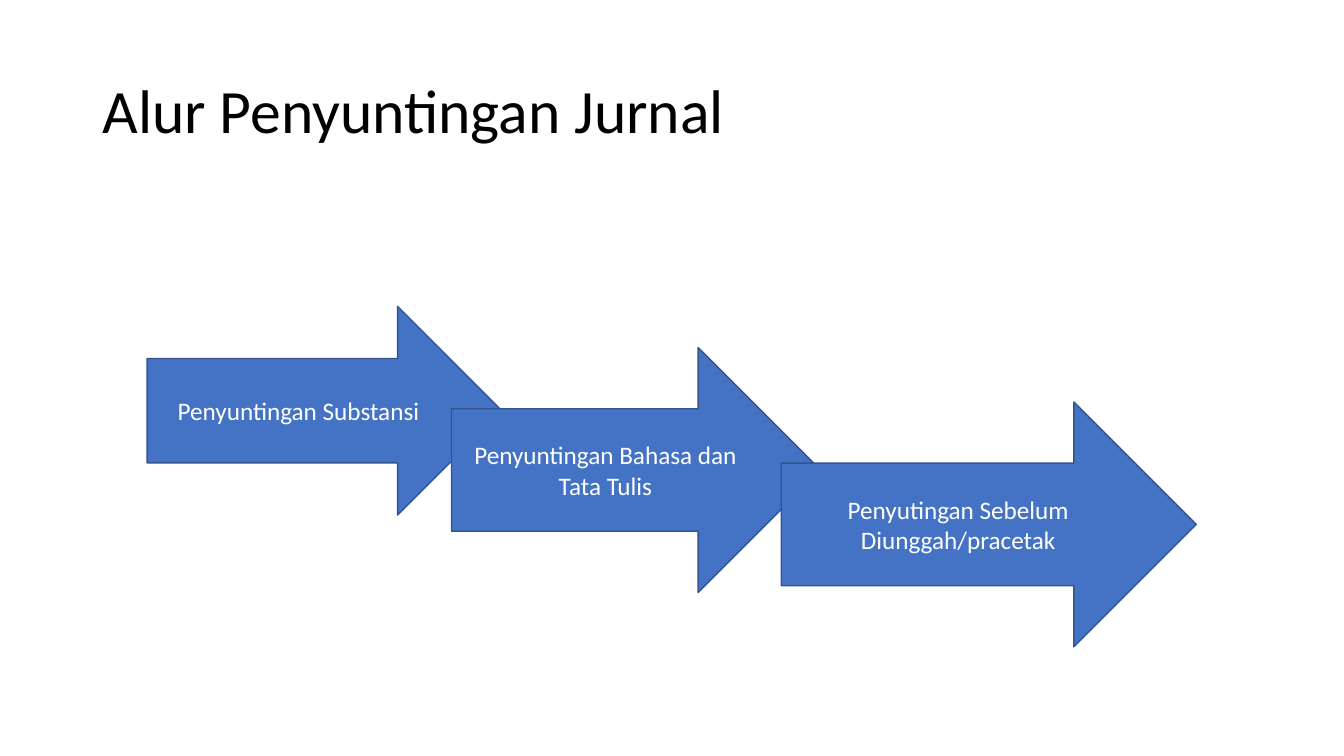
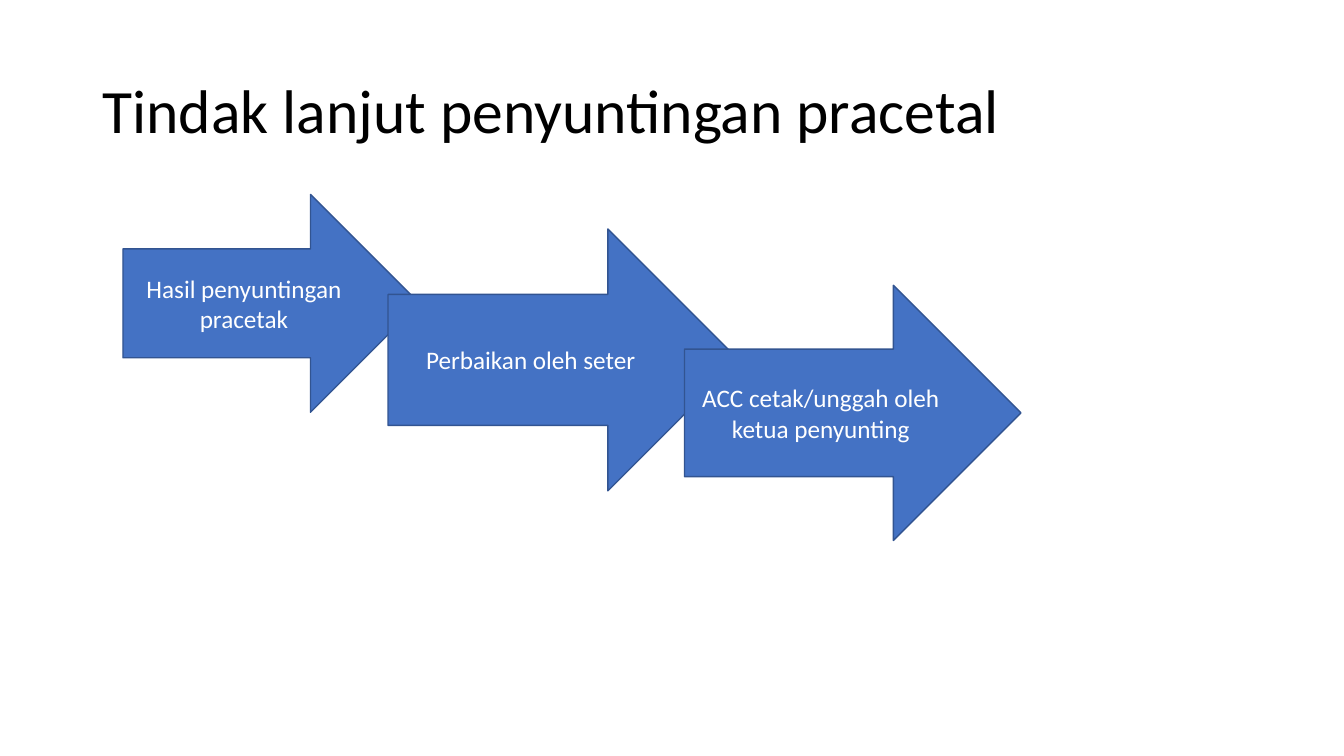
from pptx import Presentation
from pptx.dml.color import RGBColor
from pptx.enum.shapes import MSO_SHAPE
from pptx.enum.text import MSO_ANCHOR, MSO_AUTO_SIZE, PP_ALIGN
from pptx.util import Cm, Pt

ARROW = MSO_SHAPE.RIGHT_ARROW
MIDDLE = MSO_ANCHOR.MIDDLE
NO_AUTOFIT = MSO_AUTO_SIZE.NONE
LEFT, CENTER = PP_ALIGN.LEFT, PP_ALIGN.CENTER

FONT = "Calibri"
BLACK, WHITE, BLUE, DARK_BLUE = "000000", "FFFFFF", "4472C4", "325491"
TITLE_ONLY = 5

SLIDES = [
    ("Alur Penyuntingan Jurnal", [
        ("Penyuntingan Substansi", 3.71, 7.72, 8.94, 5.26),
        ("Penyuntingan Bahasa dan Tata Tulis", 11.38, 8.76, 9.3, 6.17),
        ("Penyutingan Sebelum Diunggah/pracetak", 19.69, 10.13, 10.46, 6.17),
    ]),
    ("Tindak lanjut penyuntingan pracetal", [
        ("Hasil penyuntingan pracetak", 3.1, 4.9, 7.47, 5.49),
        ("Perbaikan oleh seter", 9.78, 5.77, 8.84, 6.6),
        ("ACC cetak/unggah oleh ketua penyunting", 17.25, 7.19, 8.48, 6.43),
    ]),
]


def color(value):
    return RGBColor.from_string(value)


def write(sp, text, size, font_color, align):
    tf = sp.text_frame
    tf.text = text
    tf.word_wrap = True
    tf.auto_size = NO_AUTOFIT
    tf.vertical_anchor = MIDDLE
    p = tf.paragraphs[0]
    p.alignment = align
    p.font.name = FONT
    p.font.size = Pt(size)
    p.font.color.rgb = color(font_color)
    return p


prs = Presentation()
prs.slide_width, prs.slide_height = Cm(33.87), Cm(19.05)

for title, arrows in SLIDES:
    s = prs.slides.add_slide(prs.slide_layouts[TITLE_ONLY])
    sp = s.shapes.title
    sp.left, sp.top, sp.width, sp.height = Cm(2.33), Cm(1.01), Cm(29.21), Cm(3.68)
    p = write(sp, title, 44, BLACK, LEFT)
    p.line_spacing = 0.9

    for text, *box in arrows:
        sp = s.shapes.add_shape(ARROW, *map(Cm, box))
        sp.shadow.inherit = False
        sp.fill.solid()
        sp.fill.fore_color.rgb = color(BLUE)
        sp.line.color.rgb = color(DARK_BLUE)
        sp.line.width = Pt(1)
        write(sp, text, 18, WHITE, CENTER)

prs.save("out.pptx")
